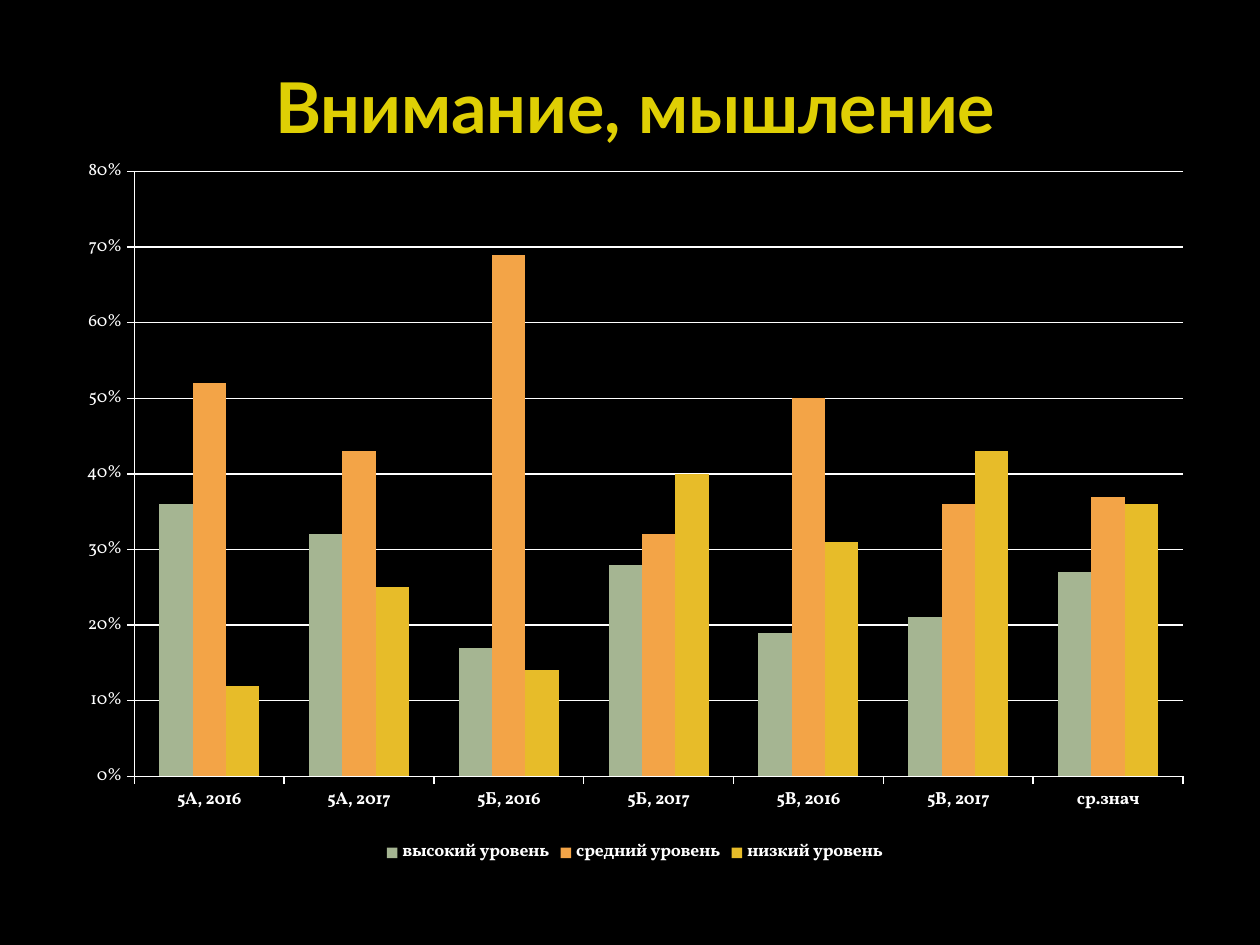
from pptx import Presentation
from pptx.chart.data import CategoryChartData as ChartData
from pptx.dml.color import RGBColor as Rgb
from pptx.enum.chart import XL_CHART_TYPE as Kind, XL_LEGEND_POSITION as Side, XL_TICK_MARK as Tick
from pptx.enum.text import MSO_ANCHOR as Anchor, PP_ALIGN as Align
from pptx.util import Pt

THEME = {
    "back": Rgb.from_string("000000"),
    "title": Rgb.from_string("DFCF04"),
    "text": Rgb.from_string("FFFFFF"),
    "bars": [Rgb.from_string(c) for c in ("A5B592", "F3A447", "E7BC29")],
    "head": Pt(40),
    "label": Pt(10),
}


def style(font, color, **form):
    for key, val in form.items():
        setattr(font, key, val)
    font.color.rgb = color


# Slide
deck = Presentation()
deck.slide_width, deck.slide_height = Pt(720), Pt(540)
slide = deck.slides.add_slide(deck.slide_layouts[6])
fill = slide.background.fill
fill.solid()
fill.fore_color.rgb = THEME["back"]

# Title
frame = slide.shapes.add_textbox(Pt(54), Pt(26), Pt(618), Pt(69)).text_frame
frame.word_wrap = True
frame.vertical_anchor = Anchor.MIDDLE
para = frame.paragraphs[0]
para.alignment = Align.CENTER
run = para.add_run()
run.text = "Внимание, мышление"
style(run.font, THEME["title"], name="Lato", size=THEME["head"], bold=True)

# Chart values
data = ChartData(number_format="0%")
data.categories = ["5А, 2016", "5А, 2017", "5Б, 2016", "5Б, 2017",
                   "5В, 2016", "5В, 2017", "ср.знач"]
levels = {
    "высокий уровень": [0.36, 0.32, 0.17, 0.28, 0.19, 0.21, 0.27],
    "средний уровень": [0.52, 0.43, 0.69, 0.32, 0.5, 0.36, 0.37],
    "низкий уровень": [0.12, 0.25, 0.14, 0.4, 0.31, 0.43, 0.36],
}
for name, vals in levels.items():
    data.add_series(name, vals)

# Chart
chart = slide.shapes.add_chart(Kind.COLUMN_CLUSTERED, Pt(36.5), Pt(83),
                               Pt(652.5), Pt(414), data).chart
chart.has_title = False
base = {"name": "Vollkorn", "size": THEME["label"]}
style(chart.font, THEME["text"], **base)

# Bars
plot = chart.plots[0]
plot.gap_width, plot.overlap = 150, 0
plot.vary_by_categories = False
for bar, color in zip(plot.series, THEME["bars"]):
    bar.format.fill.solid()
    bar.format.fill.fore_color.rgb = color

# Axes and grid
cat, val = chart.category_axis, chart.value_axis
val.minimum_scale, val.maximum_scale, val.major_unit = 0, 0.8, 0.1
val.has_major_gridlines = True
val.tick_labels.number_format = "0%"
val.tick_labels.number_format_is_linked = False
for axis in (cat, val):
    axis.major_tick_mark = Tick.OUTSIDE
    style(axis.tick_labels.font, THEME["text"], bold=axis is cat, **base)
for part in (cat, val, val.major_gridlines):
    part.format.line.color.rgb = THEME["text"]
    part.format.line.width = Pt(0.75)

# Legend
chart.has_legend = True
legend = chart.legend
legend.position = Side.BOTTOM
legend.include_in_layout = False
style(legend.font, THEME["text"], bold=True, **base)

deck.save("out.pptx")
